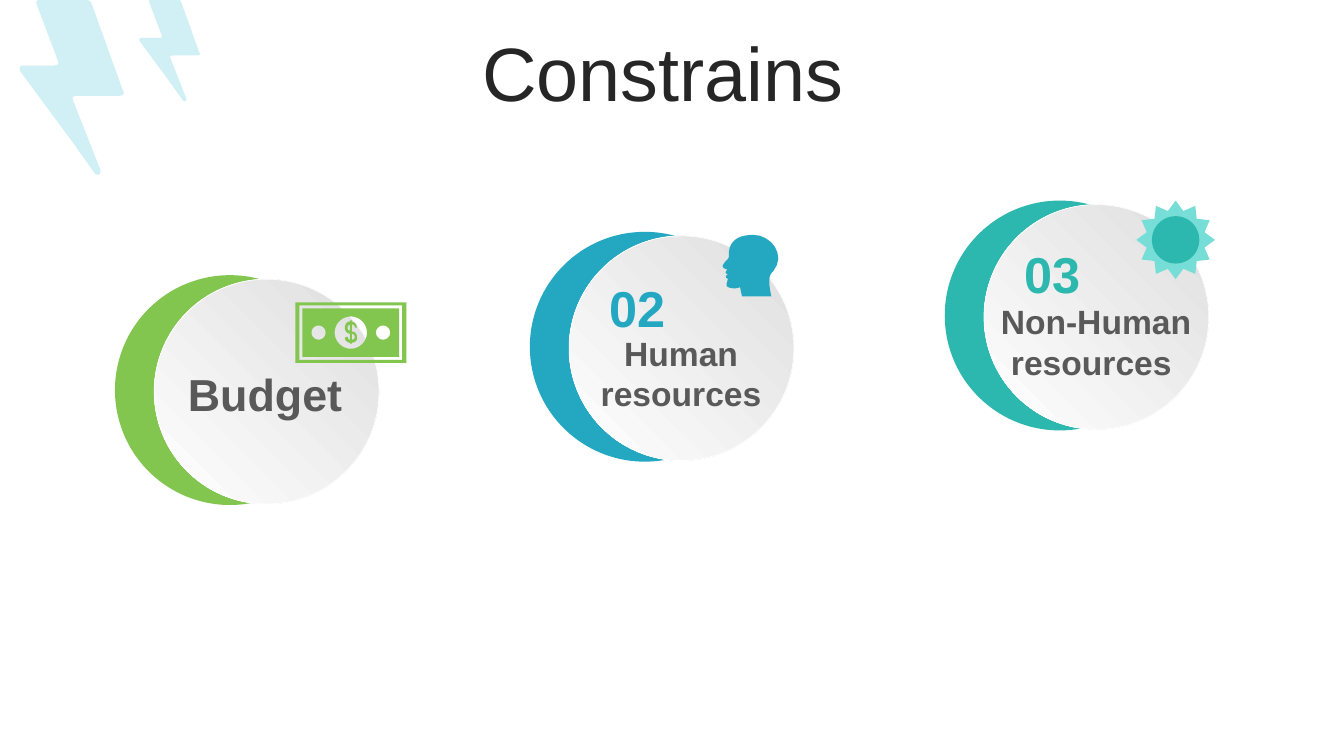
from math import cos, pi, sin

from pptx import Presentation
from pptx.dml.color import RGBColor
from pptx.enum.shapes import MSO_SHAPE
from pptx.enum.text import MSO_ANCHOR, MSO_AUTO_SIZE, PP_ALIGN
from pptx.util import Inches, Pt

OVAL, STAR = MSO_SHAPE.OVAL, MSO_SHAPE.STAR_12_POINT
MID, CENTER = MSO_ANCHOR.MIDDLE, PP_ALIGN.CENTER
FIXED = MSO_AUTO_SIZE.NONE

THEME = {
    "font": "Arial",
    "title": 54, "number": 36, "budget": 32, "label": 24,
    "ink": RGBColor.from_string("262626"),
    "text": RGBColor.from_string("595959"),
    "white": RGBColor.from_string("FFFFFF"),
    "grey": RGBColor.from_string("DEDEDE"),
    "pale": RGBColor.from_string("D0F0F6"),
    "green": RGBColor.from_string("82C650"),
    "blue": RGBColor.from_string("24A8C2"),
    "teal": RGBColor.from_string("2CB8AE"),
    "mint": RGBColor.from_string("76DED7"),
}

deck = Presentation()
deck.slide_width, deck.slide_height = Inches(13.33), Inches(7.5)
slide = deck.slides.add_slide(deck.slide_layouts[5])
shapes = slide.shapes


def trace(color, rings, left=0, top=0, size=1):
    """Fill closed outlines; a node is (x, y), or six numbers for a cubic curve."""
    pen = None
    for ring in rings:
        x, y = ring[0]
        dots = [(x, y)]
        for node in ring[1:]:
            if len(node) == 2:
                dots.append(node)
            else:
                a, b, c, d, e, f = node
                for t in (step / 8 for step in range(1, 9)):
                    u = 1 - t
                    k = (u ** 3, 3 * u * u * t, 3 * u * t * t, t ** 3)
                    dots.append((k[0] * x + k[1] * a + k[2] * c + k[3] * e,
                                 k[0] * y + k[1] * b + k[2] * d + k[3] * f))
            x, y = node[-2:]
        dots = [(1000 * px, 1000 * py) for px, py in dots]
        if pen is None:
            pen = shapes.build_freeform(*dots[0], scale=914.4 * size)
        else:
            pen.move_to(*dots[0])
        pen.add_line_segments(dots[1:], close=True)
    form = pen.convert_to_shape(Inches(left), Inches(top))
    form.shadow.inherit = False
    form.fill.solid()
    form.fill.fore_color.rgb = color
    form.line.fill.background()


def write(frame, words, size, color, bold=True):
    frame.word_wrap = True
    frame.text = words
    par = frame.paragraphs[0]
    par.alignment = CENTER
    par.font.name, par.font.size = THEME["font"], Pt(size)
    par.font.color.rgb, par.font.bold = color, bold
    return par


# Lightning bolts
BOLT = [
    (0.22, 0), (0.66, 0), (0.69, 0, 0.71, 0.01, 0.72, 0.04), (1.03, 0.9),
    (1.05, 0.93, 1.03, 0.95, 0.99, 0.95), (0.59, 0.95),
    (0.53, 0.95, 0.52, 0.96, 0.54, 1.01), (0.8, 1.67),
    (0.82, 1.71, 0.8, 1.76, 0.75, 1.72), (0.53, 1.41), (0.02, 0.72),
    (-0.01, 0.68, 0, 0.65, 0.05, 0.65), (0.34, 0.65),
    (0.39, 0.65, 0.4, 0.63, 0.38, 0.59), (0.18, 0.06),
    (0.16, 0.01, 0.17, 0, 0.22, 0),
]
for left, size in ((0.19, 1), (1.38, 0.58)):
    trace(THEME["pale"], [BOLT], left, 0, size)

# Title
title = shapes.title
title.left, title.top = Inches(0.35), Inches(0.37)
title.width, title.height = Inches(12.66), Inches(0.79)
head = write(title.text_frame, "Constrains ", THEME["title"], THEME["ink"], False)
head.line_spacing, head.space_before = 0.9, Pt(10)
title.text_frame.vertical_anchor = MID
title.text_frame.auto_size = FIXED

# Cards: top, colour, label, label size, label box within the card, number, its drop
CARDS = (
    (2.73, "green", "Budget ", "budget", (0.62, 0.86, 1.74, 0.64), None, 0),
    (2.3, "blue", "Human resources", "label", (0.3, 0.95, 2.4, 0.91), "02", 0.4),
    (1.99, "teal", "Non-Human resources ", "label", (0.3, 0.95, 2.4, 0.91), "03", 0.37),
)
for col, (top, hue, label, size, box, number, drop) in enumerate(CARDS):
    left = 1.14 + 4.115 * col
    rim, disc = (
        shapes.add_shape(OVAL, Inches(left + dx), Inches(top + dy), Inches(wide), Inches(wide))
        for dx, dy, wide in ((0, 0, 2.28), (0.39, 0.04, 2.23))
    )
    rim.shadow.inherit = disc.shadow.inherit = False
    rim.fill.solid()
    rim.fill.fore_color.rgb = THEME[hue]
    rim.line.fill.background()
    disc.fill.gradient()
    disc.fill.gradient_angle = 225
    for stop, place, shade in zip(disc.fill.gradient_stops, (0, 1), ("grey", "white")):
        stop.position, stop.color.rgb = place, THEME[shade]
    disc.line.color.rgb, disc.line.width = THEME["white"], Pt(0.5)

    dx, dy, wide, high = box
    note = shapes.add_textbox(Inches(left + dx), Inches(top + dy), Inches(wide), Inches(high))
    write(note.text_frame, label, THEME[size], THEME["text"])
    if number:
        note = shapes.add_textbox(Inches(left + 0.56), Inches(top + drop), Inches(1.01), Inches(0.71))
        write(note.text_frame, number, THEME["number"], THEME[hue])

# Sun
for kind, wide, hue in ((STAR, 0.78, "mint"), (OVAL, 0.47, "teal")):
    part = shapes.add_shape(kind, Inches(11.66 - wide / 2), Inches(2.38 - wide / 2),
                            Inches(wide), Inches(wide))
    if kind == STAR:
        part.adjustments[0] = 0.38
    part.shadow.inherit = False
    part.fill.solid()
    part.fill.fore_color.rgb = THEME[hue]
    part.line.fill.background()

# Banknote
frames = [
    [(x, y), (4.03 - x + 2.93, y), (4.03 - x + 2.93, 6.6 - y), (x, 6.6 - y)]
    for x, y in ((2.93, 3), (2.97, 3.03), (3, 3.06))
]
holes = [
    [(x + r * cos(pi * n / 24), 3.3 + r * sin(pi * n / 24)) for n in range(48)]
    for x, r in ((3.16, 0.07), (3.48, 0.16), (3.8, 0.07))
]
DOLLAR = [
    [(3.47, 3.18), (3.49, 3.18), (3.49, 3.19), (3.53, 3.2, 3.54, 3.23, 3.54, 3.25),
     (3.52, 3.25), (3.52, 3.23, 3.51, 3.22, 3.49, 3.22), (3.49, 3.29),
     (3.51, 3.29, 3.54, 3.3, 3.54, 3.34), (3.55, 3.38, 3.52, 3.4, 3.49, 3.4),
     (3.49, 3.41), (3.47, 3.41), (3.47, 3.4), (3.44, 3.4, 3.42, 3.37, 3.42, 3.35),
     (3.45, 3.34), (3.45, 3.36, 3.46, 3.37, 3.47, 3.37), (3.47, 3.31),
     (3.45, 3.31, 3.43, 3.3, 3.42, 3.26), (3.42, 3.22, 3.44, 3.19, 3.47, 3.19)],
    [(3.49, 3.31), (3.49, 3.37), (3.53, 3.37, 3.53, 3.32, 3.49, 3.31)],
    [(3.47, 3.22), (3.44, 3.23, 3.44, 3.28, 3.47, 3.28)],
]
trace(THEME["green"], frames + holes + DOLLAR)

# Head
FACE = [
    (7.47, 2.33), (7.35, 2.33, 7.27, 2.37, 7.24, 2.45),
    (7.22, 2.52, 7.24, 2.54, 7.22, 2.57), (7.19, 2.6, 7.16, 2.63, 7.17, 2.65),
    (7.18, 2.66, 7.19, 2.67, 7.21, 2.67), (7.21, 2.69, 7.19, 2.7, 7.2, 2.71),
    (7.22, 2.73), (7.21, 2.73, 7.2, 2.73, 7.2, 2.75),
    (7.2, 2.76, 7.22, 2.76, 7.22, 2.77), (7.21, 2.8, 7.2, 2.83, 7.21, 2.84),
    (7.23, 2.86, 7.29, 2.87, 7.34, 2.85), (7.36, 2.94), (7.65, 2.94),
    (7.62, 2.79, 7.62, 2.73, 7.67, 2.69), (7.8, 2.53, 7.65, 2.33, 7.47, 2.33),
]
trace(THEME["blue"], [FACE])

deck.save("out.pptx")
